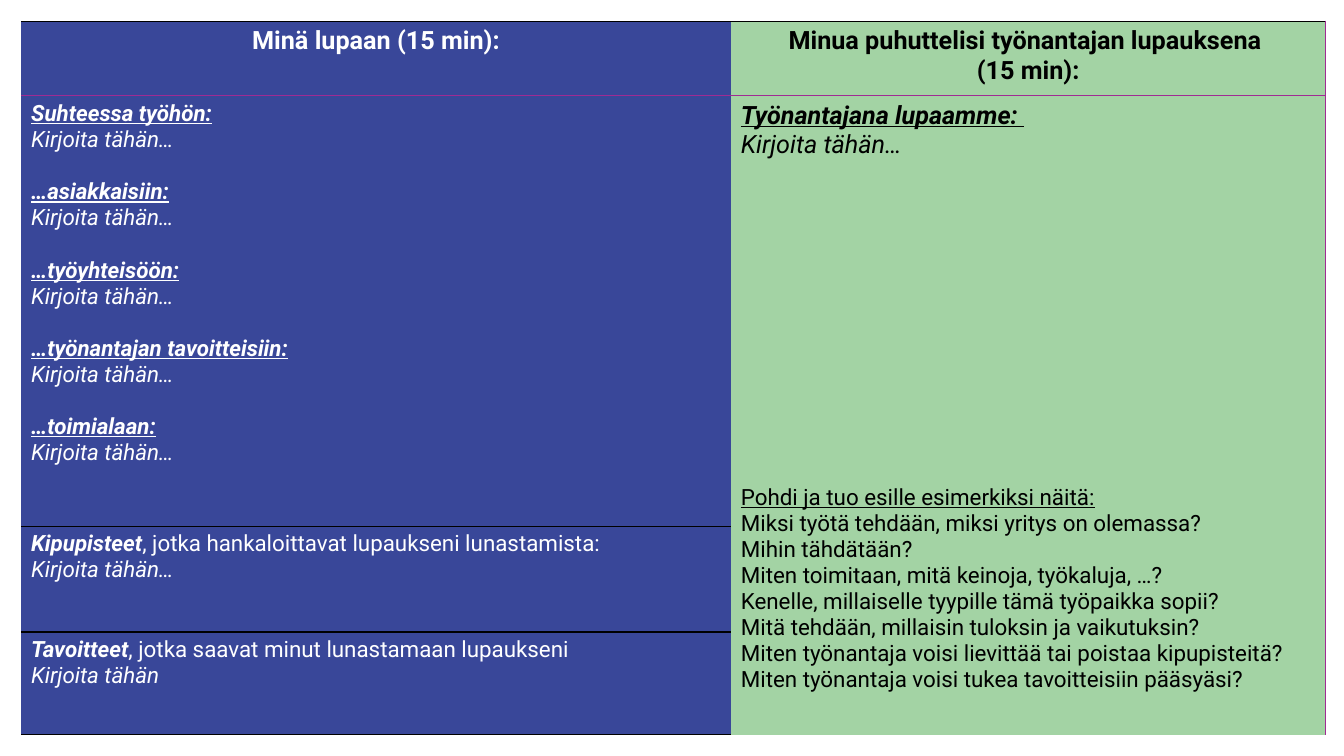
from lxml.etree import SubElement as add_element
from pptx import Presentation
from pptx.dml.color import RGBColor
from pptx.enum.text import PP_ALIGN as Align
from pptx.oxml.ns import qn
from pptx.util import Pt

BLUE, GREEN, PURPLE = "394799", "A3D3A4", "A02B93"
WHITE, BLACK = "FFFFFF", "000000"
PROMPT = [("Kirjoita tähän…", "i")]


def color(value):
    return RGBColor.from_string(value)


def fill_cell(cell, background, ink, lines, align, borders):
    properties = cell._tc.get_or_add_tcPr()
    for side in ("L", "R", "T", "B"):
        line = add_element(properties, qn(f"a:ln{side}"), w="12700")
        if side in borders:
            solid = add_element(line, qn("a:solidFill"))
            add_element(solid, qn("a:srgbClr"), val=borders[side])
        else:
            add_element(line, qn("a:noFill"))
    cell.fill.solid()
    cell.fill.fore_color.rgb = color(background)
    for index, (size, gap, pieces) in enumerate(lines):
        frame = cell.text_frame
        para = frame.paragraphs[0] if index == 0 else frame.add_paragraph()
        para.text = pieces[0][0]
        para.alignment = align
        para.space_before = Pt(gap)
        for text, style in pieces[1:]:
            para.add_run().text = text
        styles = [pieces[0][1]] * (len(para.runs) - len(pieces) + 1)
        styles += [style for text, style in pieces[1:]]
        for span, style in zip(para.runs, styles):
            span.font.name = "Roboto"
            span.font.size = Pt(size)
            span.font.color.rgb = color(ink)
            span.font.bold = "b" in style
            span.font.italic = "i" in style
            span.font.underline = "u" in style


deck = Presentation()
deck.slide_width, deck.slide_height = Pt(960), Pt(540)
page = deck.slides.add_slide(deck.slide_layouts[6])

widths = [506.9, 424.8]
heights = [53.3, 307.4, 75.6, 73.4]
table = page.shapes.add_table(
    4, 2, Pt(15.1), Pt(15.1), Pt(sum(widths)), Pt(sum(heights))
).table
for column, width in zip(table.columns, widths):
    column.width = Pt(width)
for row, height in zip(table.rows, heights):
    row.height = Pt(height)
table.cell(1, 1).merge(table.cell(3, 1))

topics = [
    "Suhteessa työhön:",
    "…asiakkaisiin:",
    "…työyhteisöön:",
    "…työnantajan tavoitteisiin:",
    "…toimialaan:",
]
promises = []
for index, topic in enumerate(topics):
    promises.append((16, 18.75 if index else 0, [(topic, "biu")]))
    promises.append((16, 0, PROMPT))

obstacles = [
    (16, 0, [("Kipupisteet", "bi"), (", jotka hankaloittavat lupaukseni lunastamista:", "")]),
    (16, 0, PROMPT),
]
goals = [
    (16, 0, [("Tavoitteet", "bi"), (", jotka saavat minut lunastamaan lupaukseni", "")]),
    (16, 0, [("Kirjoita tähän", "i")]),
]

questions = [
    "Miksi työtä tehdään, miksi yritys on olemassa?",
    "Mihin tähdätään?",
    "Miten toimitaan, mitä keinoja, työkaluja, …?",
    "Kenelle, millaiselle tyypille tämä työpaikka sopii?",
    "Mitä tehdään, millaisin tuloksin ja vaikutuksin?",
    "Miten työnantaja voisi lievittää tai poistaa kipupisteitä?",
    "Miten työnantaja voisi tukea tavoitteisiin pääsyäsi?",
]
employer = [
    (18, 0, [("Työnantajana lupaamme: ", "biu")]),
    (18, 0, PROMPT),
    (16, 232, [("Pohdi ja tuo esille esimerkiksi näitä:", "u")]),
]
employer += [(16, 0, [(question, "")]) for question in questions]

my_heading = [(18, 0, [("Minä lupaan (15 min):", "b")])]
employer_heading = [
    (18, 0, [("Minua puhuttelisi työnantajan lupauksena \n(15 min):", "b")])
]

left_cells = [my_heading, promises, obstacles, goals]
right_cells = [employer_heading, employer, [], []]
rules = [BLACK, PURPLE, BLACK, BLACK, BLACK]
for row, (left, right) in enumerate(zip(left_cells, right_cells)):
    align = Align.LEFT if row else Align.CENTER
    edges = {"T": rules[row], "B": rules[row + 1]}
    fill_cell(table.cell(row, 0), BLUE, WHITE, left, align, edges)
    right_edges = {"R": PURPLE}
    if row < 2:
        right_edges["T"] = rules[row]
    if row == 0:
        right_edges["B"] = PURPLE
    fill_cell(table.cell(row, 1), GREEN, BLACK, right, align, right_edges)

deck.save("out.pptx")
